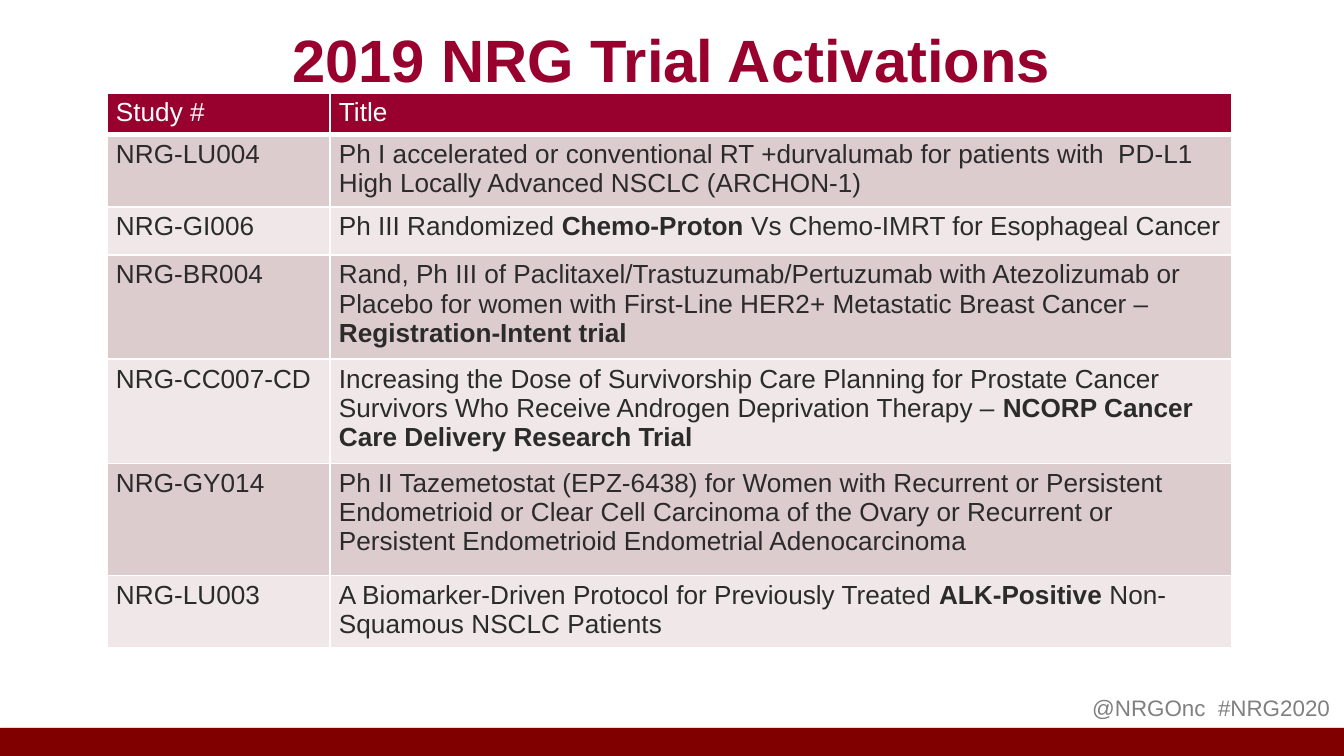
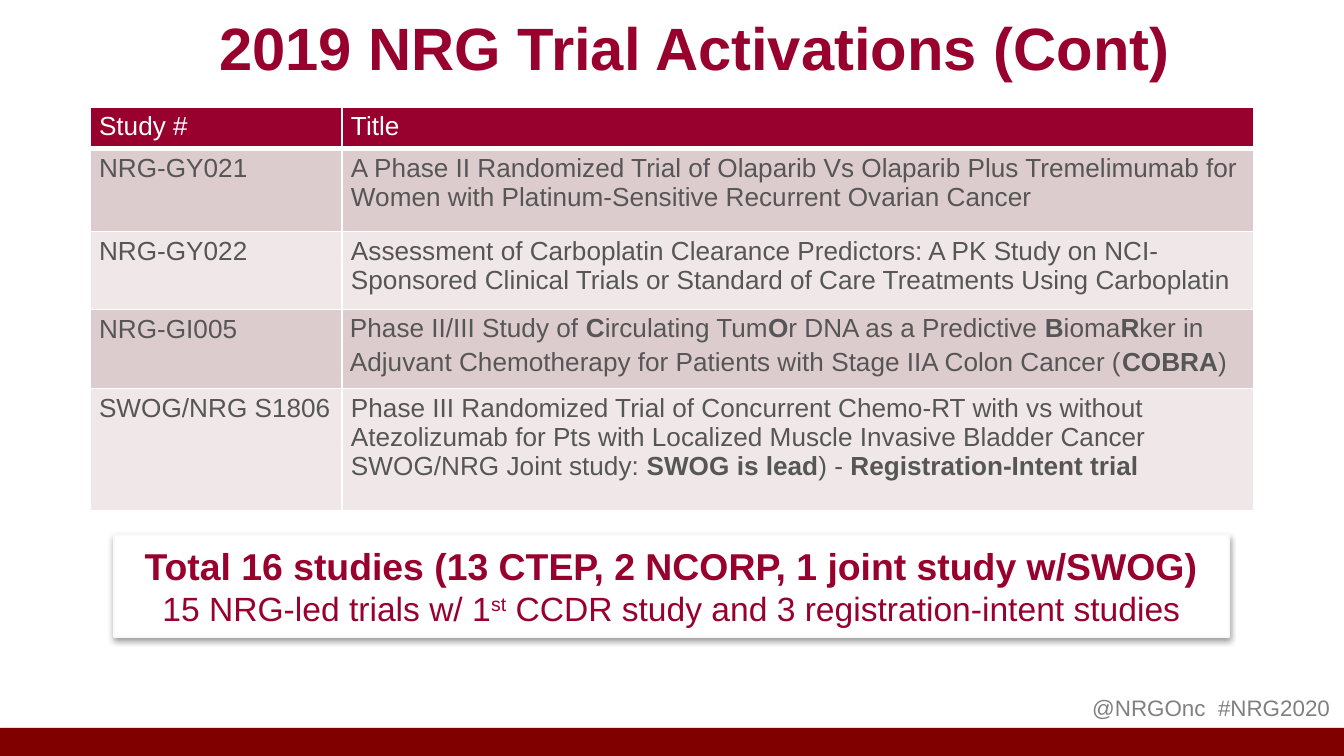
from dataclasses import dataclass

from lxml.etree import SubElement
from pptx import Presentation
from pptx.dml.color import RGBColor
from pptx.enum.shapes import MSO_SHAPE as Shape
from pptx.enum.text import MSO_ANCHOR as Anchor, MSO_AUTO_SIZE as AutoSize, PP_ALIGN as Align
from pptx.oxml.ns import qn
from pptx.util import Pt


@dataclass(frozen=True)
class Theme:
    font: str = "Arial"
    crimson: str = "98012E"
    band: str = "800000"
    white: str = "FFFFFF"
    outline: str = "F9F9F9"
    grey: str = "808080"
    stripes: tuple = ("DDCCCD", "EFE7E8")
    title_size: int = 32
    total_size: int = 20
    detail_size: int = 18
    table_size: int = 14
    tag_size: int = 12


THEME = Theme()
PX = 914400 / 134.4
PAGE_W, PAGE_H = 1344, 756
CELL_INSETS = (9, 5, 9, 5)

# Content: *bold*, ^superscript^
HASHTAG = "@NRGOnc  #NRG2020"
HEADINGS = ("Study #", "Title")
SLIDES = [
    {
        "title": "2019 NRG Trial Activations",
        "title_at": (218, 12, 907, 60),
        "table_at": (107, 93),
        "columns": (223, 902),
        "heights": (40, 70, 48, 101, 101, 112, 70),
        "ink": "2B2B2B",
        "trials": [
            ("NRG-LU004", "Ph I accelerated or conventional RT +durvalumab for patients with  PD-L1 "
                          "High Locally Advanced NSCLC (ARCHON-1)"),
            ("NRG-GI006", "Ph III Randomized *Chemo-Proton *Vs Chemo-IMRT for Esophageal Cancer"),
            ("NRG-BR004", "Rand, Ph III of Paclitaxel/Trastuzumab/Pertuzumab with Atezolizumab or "
                          "Placebo for women with First-Line HER2+ Metastatic Breast Cancer – "
                          "*Registration-Intent trial*"),
            ("NRG-CC007-CD", "Increasing the Dose of Survivorship Care Planning for Prostate Cancer "
                             "Survivors Who Receive Androgen Deprivation Therapy – "
                             "*NCORP Cancer Care Delivery Research Trial*"),
            ("NRG-GY014", "Ph II Tazemetostat (EPZ-6438) for Women with Recurrent or Persistent "
                          "Endometrioid or Clear Cell Carcinoma of the Ovary or Recurrent or "
                          "Persistent Endometrioid Endometrial Adenocarcinoma"),
            ("NRG-LU003", "A Biomarker-Driven Protocol for Previously Treated *ALK-Positive* "
                          "Non-Squamous NSCLC Patients"),
        ],
    },
    {
        "title": "2019 NRG Trial Activations (Cont)",
        "title_at": (160, 0, 1070, 94),
        "table_at": (90, 107),
        "columns": (252, 912),
        "heights": (40, 83, 78, 79, 123),
        "ink": "565656",
        "trials": [
            ("NRG-GY021", "A Phase II Randomized Trial of Olaparib Vs Olaparib Plus Tremelimumab for "
                          "Women with Platinum-Sensitive Recurrent Ovarian Cancer"),
            ("NRG-GY022", "Assessment of Carboplatin Clearance Predictors: A PK Study on "
                          "NCI-Sponsored Clinical Trials or Standard of Care Treatments Using "
                          "Carboplatin"),
            ("NRG-GI005", "Phase II/III Study of *C*irculating Tum*O*r DNA as a Predictive "
                          "*B*ioma*R*ker in Adjuvant Chemotherapy for Patients with Stage IIA "
                          "Colon Cancer (*COBRA*)"),
            ("SWOG/NRG S1806", "Phase III Randomized Trial of Concurrent Chemo-RT with vs without "
                               "Atezolizumab for Pts with Localized Muscle Invasive Bladder Cancer "
                               "SWOG/NRG Joint study: *SWOG is lead*) - *Registration-Intent trial*"),
        ],
        "loose_trial": "NRG-GI005",
        "summary_at": (114, 535, 1115, 102),
        "summary": [
            ("Total 16 studies (13 CTEP, 2 NCORP, 1 joint study w/SWOG)", THEME.total_size, True),
            ("15 NRG-led trials w/ 1^st^ CCDR study and 3 registration-intent studies",
             THEME.detail_size, False),
        ],
    },
]


def px(*lengths):
    return [round(length * PX) for length in lengths]


def color(code):
    return RGBColor.from_string(code)


def write(para, text, size, ink, bold=False, align=None):
    for i, part in enumerate(text.split("*")):
        for j, piece in enumerate(part.split("^")):
            if not piece:
                continue
            span = para.add_run()
            span.text = piece
            if i % 2:
                span.font.bold = True
            if j % 2:
                span.font._element.set("baseline", "30000")
    para.alignment = align
    font = para.font
    font.name, font.size, font.bold = THEME.font, Pt(size), bold
    font.color.rgb = color(ink)


def set_insets(holder, insets):
    (holder.margin_left, holder.margin_top,
     holder.margin_right, holder.margin_bottom) = px(*insets)


def add_panel(page, at, fill, opacity, distance, line=None):
    """Rectangle with a soft shadow falling straight down."""
    panel = page.shapes.add_shape(Shape.RECTANGLE, *px(*at))
    panel.shadow.inherit = False
    panel.fill.solid()
    panel.fill.fore_color.rgb = color(fill)
    if line:
        panel.line.color.rgb = color(line)
        panel.line.width = Pt(0.75)
    else:
        panel.line.fill.background()
    effects = panel.element.spPr.find(qn("a:effectLst"))
    shadow = SubElement(effects, qn("a:outerShdw"), blurRad=str(Pt(3.1)), dist=str(Pt(distance)),
                        dir="5400000", rotWithShape="0")
    black = SubElement(shadow, qn("a:srgbClr"), val="000000")
    SubElement(black, qn("a:alpha"), val=str(opacity * 1000))
    return panel


def add_frame(page, title, title_at):
    """Title, bottom band and hashtag shared by the slides."""
    add_panel(page, (0, 728, PAGE_W, PAGE_H - 728), THEME.band, 35, 1.8)

    heading = page.shapes.title
    heading.left, heading.top, heading.width, heading.height = px(*title_at)
    frame = heading.text_frame
    frame.auto_size = AutoSize.NONE
    frame.vertical_anchor = Anchor.TOP
    set_insets(frame, (9, 11, 9, 5))
    write(frame.paragraphs[0], title, THEME.title_size, THEME.crimson, True, Align.CENTER)

    tag = page.shapes.add_textbox(*px(1079, 688, 265, 40)).text_frame
    tag.word_wrap = False
    tag.auto_size = AutoSize.SHAPE_TO_FIT_TEXT
    write(tag.paragraphs[0], HASHTAG, THEME.tag_size, THEME.grey)


def format_cell(cell, fill, bottom=1):
    props = cell._tc.get_or_add_tcPr()
    for side, width in (("L", 1), ("R", 1), ("T", 1), ("B", bottom)):
        line = SubElement(props, qn(f"a:ln{side}"), w=str(Pt(width)))
        SubElement(SubElement(line, qn("a:solidFill")), qn("a:srgbClr"), val=THEME.white)
    cell.fill.solid()
    cell.fill.fore_color.rgb = color(fill)
    set_insets(cell, CELL_INSETS)


def add_trials(page, table_at, columns, heights, ink, trials, loose_trial=None):
    size = (sum(columns), sum(heights))
    table = page.shapes.add_table(len(heights), len(columns), *px(*table_at, *size)).table
    for column, width in zip(table.columns, px(*columns)):
        column.width = width
    for row, height in zip(table.rows, px(*heights)):
        row.height = height
    for r, texts in enumerate([HEADINGS, *trials]):
        header = r == 0
        fill = THEME.crimson if header else THEME.stripes[(r - 1) % 2]
        for c, text in enumerate(texts):
            cell = table.cell(r, c)
            format_cell(cell, fill, 3 if header else 1)
            para = cell.text_frame.paragraphs[0]
            write(para, text, THEME.table_size, THEME.white if header else ink)
            if c == 1 and texts[0] == loose_trial:
                set_insets(cell, (8, 0, 8, 0))
                para.line_spacing = 1.15


def add_summary(page, at, lines):
    frame = add_panel(page, at, THEME.white, 38, 1.6, THEME.outline).text_frame
    frame.word_wrap = True
    frame.vertical_anchor = Anchor.MIDDLE
    for i, (text, size, bold) in enumerate(lines):
        para = frame.add_paragraph() if i else frame.paragraphs[0]
        write(para, text, size, THEME.crimson, bold, Align.CENTER)


def main():
    deck = Presentation()
    deck.slide_width, deck.slide_height = px(PAGE_W, PAGE_H)
    for item in SLIDES:
        page = deck.slides.add_slide(deck.slide_layouts[5])
        add_frame(page, item["title"], item["title_at"])
        add_trials(page, item["table_at"], item["columns"], item["heights"],
                   item["ink"], item["trials"], item.get("loose_trial"))
        if "summary" in item:
            add_summary(page, item["summary_at"], item["summary"])
    deck.save("out.pptx")


if __name__ == "__main__":
    main()
